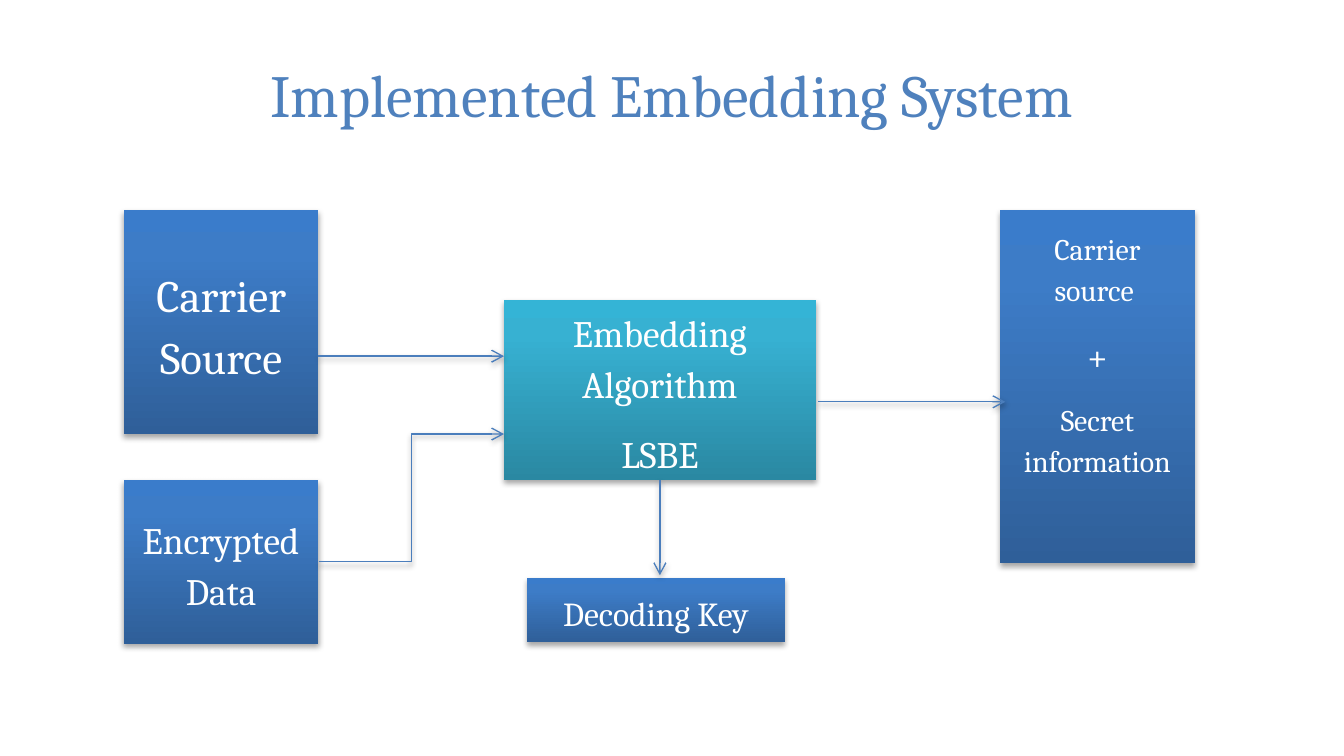
from dataclasses import dataclass

from lxml import etree
from pptx import Presentation
from pptx import util as u
from pptx.dml.color import RGBColor
from pptx.enum import shapes, text
from pptx.oxml import ns


@dataclass(frozen=True)
class Theme:
    font: str = "Cambria"
    title: str = "4F81BD"
    label: str = "FFFFFF"
    arrow: str = "4B7EBC"
    blue: tuple = ((0, "2F5F99"), (80, "3D7CC7"), (100, "3A7CCB"))
    teal: tuple = ((0, "2A88A2"), (80, "37B1D2"), (100, "34B4D6"))
    title_size: int = 32
    large: int = 24
    medium: int = 20
    small: int = 18
    tiny: int = 16


THEME = Theme()


def child(parent, tag, **attributes):
    values = {name: str(value) for name, value in attributes.items()}
    return etree.SubElement(parent, ns.qn(tag), values)


def add_shadow(properties, opacity, distance):
    effects = child(properties, "a:effectLst")
    shadow = child(effects, "a:outerShdw", blurRad=u.Pt(3.1), dist=u.Pt(distance),
                   dir=90 * 60000, rotWithShape=0)
    black = child(shadow, "a:srgbClr", val="000000")
    child(black, "a:alpha", val=opacity * 1000)


def fill_gradient(block, stops):
    block.fill.gradient()
    block.fill.gradient_angle = 90
    stop_list = block.element.spPr.find(".//" + ns.qn("a:gsLst"))
    for stop in list(stop_list):
        stop_list.remove(stop)
    for position, color in stops:
        stop = child(stop_list, "a:gs", pos=position * 1000)
        child(stop, "a:srgbClr", val=color)


def style_paragraph(paragraph, wording, size, color):
    paragraph.text = wording
    paragraph.alignment = text.PP_ALIGN.CENTER
    paragraph.font.name = THEME.font
    paragraph.font.size = u.Pt(size)
    paragraph.font.color.rgb = RGBColor.from_string(color)


def add_title(slide, left, top, width, height):
    title = slide.shapes.add_textbox(*map(u.Inches, (left, top, width, height)))
    frame = title.text_frame
    frame.word_wrap = True
    frame.vertical_anchor = text.MSO_ANCHOR.MIDDLE
    style_paragraph(frame.paragraphs[0], "Implemented Embedding System",
                    THEME.title_size, THEME.title)


def add_block(slide, box, labels, stops=THEME.blue, bottom_inset=0.05):
    block = slide.shapes.add_shape(shapes.MSO_SHAPE.RECTANGLE, *map(u.Inches, box))
    fill_gradient(block, stops)
    block.line.fill.background()
    add_shadow(block.element.spPr, 35, 1.8)
    frame = block.text_frame
    frame.word_wrap = True
    frame.vertical_anchor = text.MSO_ANCHOR.MIDDLE
    frame.margin_bottom = u.Inches(bottom_inset)
    for index, (wording, size) in enumerate(labels):
        paragraph = frame.add_paragraph() if index else frame.paragraphs[0]
        style_paragraph(paragraph, wording, size, THEME.label)
        paragraph.line_spacing = 1.15
        paragraph.space_after = u.Pt(10)
    return block


def add_arrow(slide, start, end, kind=shapes.MSO_CONNECTOR.STRAIGHT):
    arrow = slide.shapes.add_connector(kind, *map(u.Inches, start + end))
    arrow.line.color.rgb = RGBColor.from_string(THEME.arrow)
    arrow.line.width = u.Pt(0.75)
    child(arrow.line._get_or_add_ln(), "a:tailEnd", type="arrow")
    add_shadow(arrow.element.spPr, 38, 1.6)
    return arrow


def add_diagram(slide, left, top):
    side_width, gap = 1.45, 1.39
    core_left, core_top, core_width, core_height = left + 2.83, top + 0.67, 2.32, 1.34
    core_bottom = core_top + core_height
    core_middle = core_left + core_width / 2
    side_right = left + side_width
    result_left = left + 6.52

    add_block(slide, (left, top, side_width, 1.67), [("Carrier Source", THEME.large)])
    encrypted = add_block(slide, (left, core_bottom, side_width, 1.22),
                          [("Encrypted Data", THEME.medium)])
    embedding = add_block(slide, (core_left, core_top, core_width, core_height),
                          [("Embedding Algorithm", THEME.medium), ("LSBE", THEME.medium)],
                          THEME.teal)
    add_block(slide, (result_left, top, side_width, 2.63),
              [("Carrier source ", THEME.tiny), ("+", THEME.medium),
               ("Secret information", THEME.tiny)], bottom_inset=0.56)

    add_arrow(slide, (side_right, top + 1.09), (core_left, top + 1.09))
    output_left = core_left + core_width + 0.02
    add_arrow(slide, (output_left, top + 1.43), (output_left + gap, top + 1.43))
    data_arrow = add_arrow(slide, (side_right, top + 2.62), (core_left, top + 1.67),
                           shapes.MSO_CONNECTOR.ELBOW)
    data_arrow.begin_connect(encrypted, 3)

    add_block(slide, (left + 3, top + 2.74, 1.92, 0.48), [("Decoding Key", THEME.small)])
    key_arrow = add_arrow(slide, (core_middle, core_bottom), (core_middle, top + 2.72))
    key_arrow.begin_connect(embedding, 2)


def main():
    deck = Presentation()
    deck.slide_width = u.Inches(10)
    deck.slide_height = deck.slide_width * 9 // 16
    slide = deck.slides.add_slide(deck.slide_layouts[6])
    add_title(slide, 0.5, 0.23, 9, 0.94)
    add_diagram(slide, 0.92, 1.56)
    deck.save("out.pptx")


if __name__ == "__main__":
    main()
